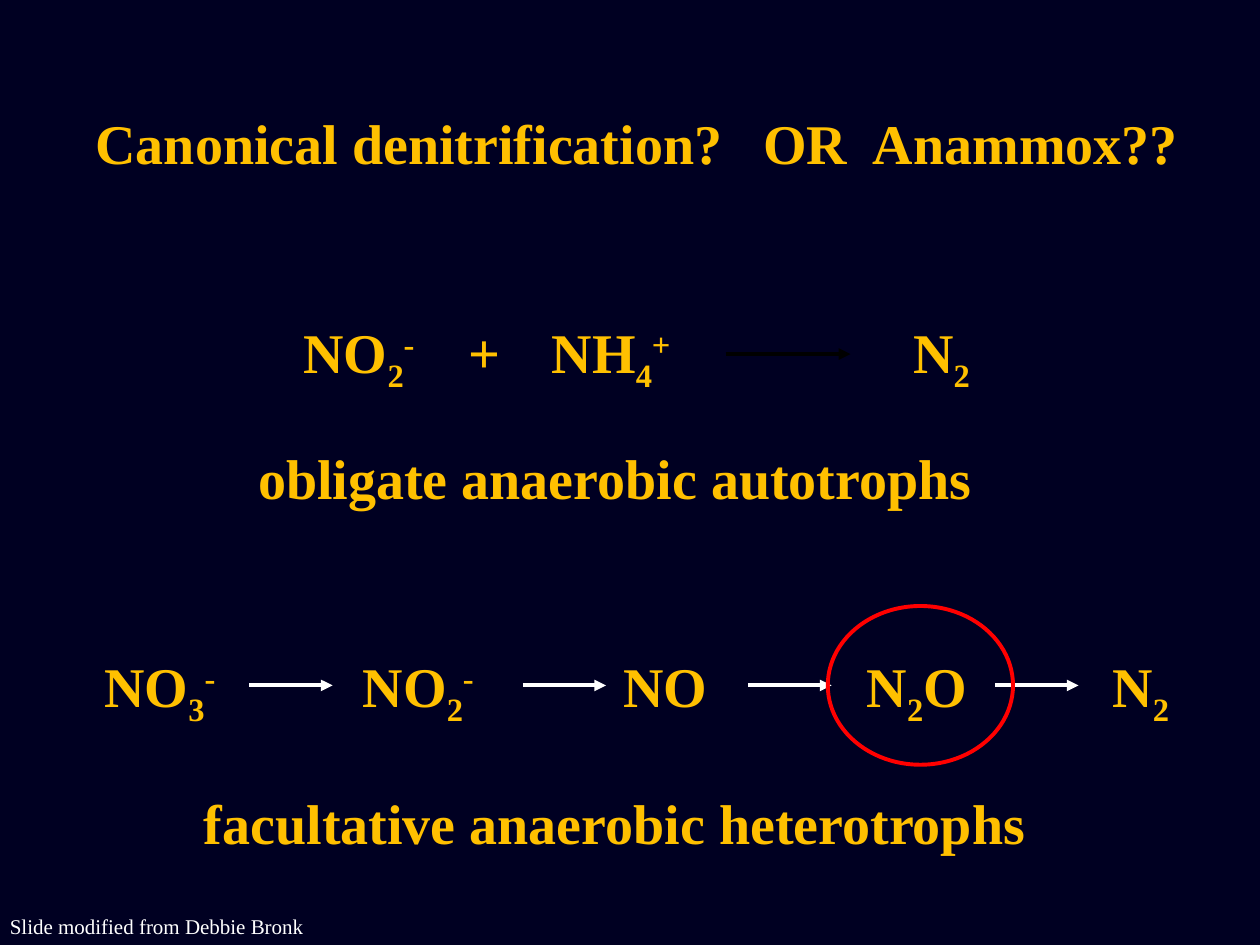
from lxml import etree
from pptx import Presentation
from pptx.dml.color import RGBColor
from pptx.enum.shapes import MSO_CONNECTOR, MSO_SHAPE
from pptx.enum.text import MSO_AUTO_SIZE
from pptx.oxml.ns import qn
from pptx.util import Inches, Pt

STRAIGHT = MSO_CONNECTOR.STRAIGHT
OVAL = MSO_SHAPE.OVAL
GROW = MSO_AUTO_SIZE.SHAPE_TO_FIT_TEXT

COLUMNS, ROWS = 100, 75
CELL = Inches(0.1)
TEXT_ROWS = 6.4
FONT = "Times New Roman"
NIGHT, GOLD, WHITE, BLACK, RED = "000022", "FFC000", "FFFFFF", "000000", "FF0000"
SUB, SUPER = -25000, 30000

NITRATE = [("NO", 0), ("3", SUB), ("-", SUPER)]
NITRITE = [("NO", 0), ("2", SUB), ("-", SUPER)]
AMMONIUM = [("NH", 0), ("4", SUB), ("+", SUPER)]
NITRIC_OXIDE = [("NO", 0)]
NITROUS_OXIDE = [("N", 0), ("2", SUB), ("O", 0)]
NITROGEN = [("N", 0), ("2", SUB)]
PLUS = [("+", 0)]


def rgb(color):
    return RGBColor.from_string(color)


def grid(*cells):
    return [round(cell * CELL) for cell in cells]


def add_text(shapes, box, parts, size=32, color=GOLD, bold=True, wrap=False):
    frame = shapes.add_textbox(*grid(*box)).text_frame
    frame.word_wrap = wrap
    frame.auto_size = GROW
    paragraph = frame.paragraphs[0]
    for words, baseline in parts:
        run = paragraph.add_run()
        run.text = words
        run.font.name = FONT
        run.font.size = Pt(size)
        run.font.bold = bold
        run.font.color.rgb = rgb(color)
        if baseline:
            run.font._element.set("baseline", str(baseline))
    return paragraph


def add_arrow(shapes, left, top, length, color):
    arrow = shapes.add_connector(STRAIGHT, *grid(left, top, left + length, top))
    arrow.line.color.rgb = rgb(color)
    arrow.line.width = Pt(2.25)
    line = arrow.line._get_or_add_ln()
    etree.SubElement(line, qn("a:tailEnd"), type="triangle")
    etree.SubElement(arrow._element.spPr, qn("a:effectLst"))


def add_title(shapes, box):
    title = add_text(
        shapes, box, [("Canonical denitrification?\tOR\tAnammox??", 0)], wrap=True
    )
    tabs = etree.SubElement(title._p.get_or_add_pPr(), qn("a:tabLst"))
    for stop in grid(53, 61.7):
        etree.SubElement(tabs, qn("a:tab"), pos=str(stop), algn="l")


def add_reaction(shapes, origin, species, arrow_starts, arrow_drop, arrow_length, color):
    left, top = origin
    reaction = shapes.add_group_shape().shapes
    for offset, width, formula in species:
        add_text(reaction, (left + offset, top, width, TEXT_ROWS), formula)
    for start in arrow_starts:
        add_arrow(reaction, left + start, top + arrow_drop, arrow_length, color)


def add_caption(shapes, box, words):
    add_text(shapes, box, [(words, 0)])


def add_highlight(shapes, box):
    ring = shapes.add_shape(OVAL, *grid(*box))
    ring.shadow.inherit = False
    ring.fill.background()
    ring.line.color.rgb = rgb(RED)
    ring.line.width = Pt(2.25)


def add_credit(shapes, box):
    add_text(shapes, box, [("Slide modified from Debbie Bronk", 0)], 12, WHITE, False)


def main():
    deck = Presentation()
    deck.slide_width, deck.slide_height = grid(COLUMNS, ROWS)
    slide = deck.slides.add_slide(deck.slide_layouts[6])
    slide.background.fill.solid()
    slide.background.fill.fore_color.rgb = rgb(NIGHT)
    shapes = slide.shapes

    add_title(shapes, (6.6, 8.1, 88.8, TEXT_ROWS))
    anammox = [
        (0, 11.2, NITRITE),
        (13.1, 4.5, PLUS),
        (19.7, 11.9, AMMONIUM),
        (48.4, 6.7, NITROGEN),
    ]
    add_reaction(shapes, (23.1, 24.7), anammox, [34.5], 3.4, 9.9, BLACK)
    add_caption(shapes, (19.5, 34.7, 58.8, TEXT_ROWS), "obligate anaerobic autotrophs")

    denitrification = [
        (0, 11.2, NITRATE),
        (20.5, 11.2, NITRITE),
        (41.2, 8.7, NITRIC_OXIDE),
        (60.5, 10.3, NITROUS_OXIDE),
        (80, 6.8, NITROGEN),
    ]
    arrow_starts = [12.5, 34.2, 52.1, 71.7]
    add_reaction(shapes, (7.3, 51.2), denitrification, arrow_starts, 3.2, 6.6, WHITE)
    add_caption(
        shapes, (15.2, 62.1, 67.4, TEXT_ROWS), "facultative anaerobic heterotrophs"
    )
    add_highlight(shapes, (65.7, 48.1, 14.7, 12.6))
    add_credit(shapes, (-0.2, 72, 25.6, 3))

    deck.save("out.pptx")


if __name__ == "__main__":
    main()
